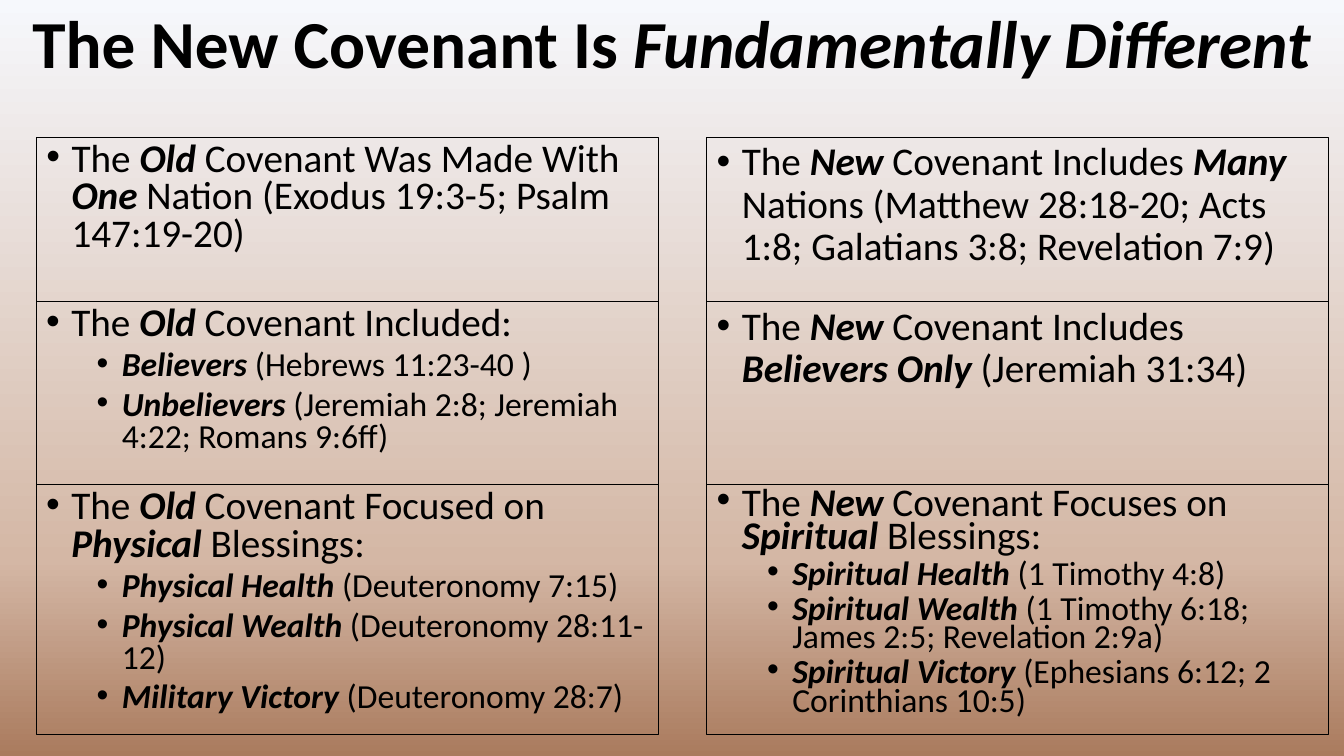
from lxml import etree
from pptx import Presentation
from pptx.dml.color import RGBColor
from pptx.enum.text import MSO_ANCHOR, MSO_AUTO_SIZE, PP_ALIGN
from pptx.oxml.ns import qn
from pptx.util import Inches, Pt

TOP, MIDDLE = MSO_ANCHOR.TOP, MSO_ANCHOR.MIDDLE
LEFT, CENTER = PP_ALIGN.LEFT, PP_ALIGN.CENTER
FIXED = MSO_AUTO_SIZE.NONE

COLORS = {"ink": "000000", "sky": "F6F8FC", "sand": "D4B7A5", "clay": "AA7B5E"}
INK = RGBColor.from_string(COLORS["ink"])
STOPS = [(0, "sky"), (74, "sand"), (100, "clay")]
FONT = "Calibri"

ROWS = [(1.36, 1.63), (2.99, 1.82), (4.81, 2.48)]
WIDTH = 6.17
OLD = [
    (0.8, ["The *Old* Covenant Was Made With *One* Nation (Exodus 19:3-5; Psalm 147:19-20)"]),
    (0.8, ["The *Old* Covenant Included:",
           "*Believers* (Hebrews 11:23-40 )",
           "*Unbelievers* (Jeremiah 2:8; Jeremiah 4:22; Romans 9:6ff)"]),
    (0.8, ["The *Old* Covenant Focused on *Physical* Blessings:",
           "*Physical Health *(Deuteronomy 7:15)",
           "*Physical Wealth *(Deuteronomy 28:11-12)",
           "*Military Victory *(Deuteronomy 28:7)"]),
]
NEW = [
    (0.9, ["The *New* Covenant Includes *Many* Nations (Matthew 28:18-20; Acts 1:8; Galatians 3:8; Revelation 7:9)"]),
    (0.9, ["The *New* Covenant Includes *Believers Only *(Jeremiah 31:34)"]),
    (0.7, ["The *New* Covenant Focuses on *Spiritual* Blessings:",
           "*Spiritual Health *(1 Timothy 4:8)",
           "*Spiritual Wealth* (1 Timothy 6:18; James 2:5; Revelation 2:9a)",
           "*Spiritual Victory *(Ephesians 6:12; 2 Corinthians 10:5)"]),
]


def place(shape, left, top, width, height):
    shape.left, shape.top = Inches(left), Inches(top)
    shape.width, shape.height = Inches(width), Inches(height)


def add_run(para, text, size, bold, italic):
    run = para.add_run()
    run.text = text
    run.font.name = FONT
    run.font.size = Pt(size)
    run.font.bold = bold
    run.font.italic = italic
    run.font.color.rgb = INK


deck = Presentation()
deck.slide_width, deck.slide_height = Inches(13.33), Inches(7.5)
slide = deck.slides.add_slide(deck.slide_layouts[1])

fill = slide.background.fill
fill.gradient()
fill.gradient_angle = 270
stops = slide.element.find(".//" + qn("a:gsLst"))
stops.clear()
for spot, name in STOPS:
    stop = etree.SubElement(stops, qn("a:gs"), pos=str(spot * 1000))
    etree.SubElement(stop, qn("a:srgbClr"), val=COLORS[name])

title = slide.shapes.title
place(title, 0, 0, 13.33, 0.93)
frame = title.text_frame
frame.auto_size = FIXED
frame.word_wrap = True
frame.vertical_anchor = MIDDLE
para = frame.paragraphs[0]
para.alignment = CENTER
para.line_spacing = 0.9
add_run(para, "The New Covenant Is ", 48, True, False)
add_run(para, "Fundamentally Different", 48, True, True)

body = slide.placeholders[1]
for left, column in [(0.36, OLD), (7.01, NEW)]:
    for (top, height), (spacing, lines) in zip(ROWS, column):
        first = column is OLD and top == ROWS[0][0]
        box = body if first else slide.shapes.add_textbox(0, 0, 0, 0)
        place(box, left, top, WIDTH, height)
        box.line.color.rgb = INK
        box.line.width = Pt(0.75)
        frame = box.text_frame
        frame.auto_size = FIXED
        frame.word_wrap = True
        frame.vertical_anchor = TOP
        for row, line in enumerate(lines):
            level = min(row, 1)
            para = frame.add_paragraph() if row else frame.paragraphs[0]
            para.level = level
            props = para._p.get_or_add_pPr()
            props.set("marL", str(Inches(0.25 + 0.5 * level)))
            props.set("indent", str(Inches(-0.25)))
            etree.SubElement(props, qn("a:buFont"), typeface="Arial")
            etree.SubElement(props, qn("a:buChar"), char="•")
            para.alignment = LEFT
            para.line_spacing = spacing
            para.space_before = Pt(5 * level)
            for part, text in enumerate(line.split("*")):
                if text:
                    strong = part % 2 == 1
                    add_run(para, text, 24 if level else 28, strong, strong)

deck.save("out.pptx")
